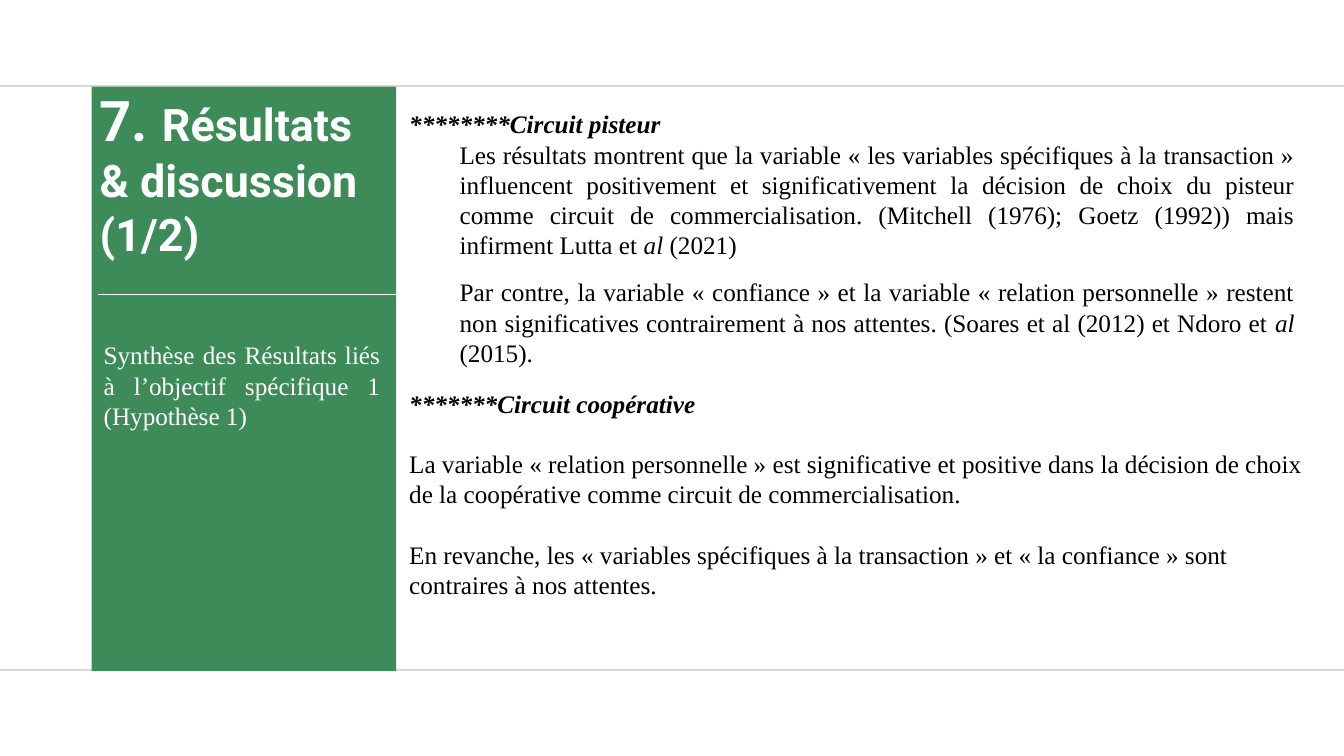
from lxml import etree
from pptx import Presentation
from pptx import util as u
from pptx.dml.color import RGBColor
from pptx.enum import shapes, text
from pptx.oxml import ns

PX = 9144
COLORS = {"green": "3E8B5A", "white": "FFFFFF", "black": "000000", "rule": "D9D9D9"}
SERIF = "Times New Roman"
SANS = "Roboto"


def color(name):
    return RGBColor.from_string(COLORS[name])


def add_text(paragraph, content, font=SERIF, size=18, ink="black", bold=False, italic=False):
    run = paragraph.add_run()
    run.text = content
    run.font.name = font
    run.font.size = u.Pt(size)
    run.font.color.rgb = color(ink)
    run.font.bold = bold
    run.font.italic = italic


class SlideBuilder:
    def __init__(self, presentation):
        self.slide = presentation.slides.add_slide(presentation.slide_layouts[6])

    def line(self, left, right, y, ink, width):
        connector = self.slide.shapes.add_connector(
            shapes.MSO_CONNECTOR.STRAIGHT, left * PX, y * PX, right * PX, y * PX)
        connector.line.color.rgb = color(ink)
        connector.line.width = u.Pt(width)
        etree.SubElement(connector._element.spPr, ns.qn("a:effectLst"))

    def panel(self, left, top, width, height, fill):
        shape = self.slide.shapes.add_shape(
            shapes.MSO_SHAPE.RECTANGLE, left * PX, top * PX, width * PX, height * PX)
        shape.shadow.inherit = False
        shape.fill.solid()
        shape.fill.fore_color.rgb = color(fill)
        shape.line.fill.background()

    def textbox(self, left, top, width, height, paragraphs, justify=False, gap=0):
        box = self.slide.shapes.add_textbox(left * PX, top * PX, width * PX, height * PX)
        frame = box.text_frame
        frame.word_wrap = True
        for index, runs in enumerate(paragraphs):
            paragraph = frame.add_paragraph() if index else frame.paragraphs[0]
            paragraph.alignment = text.PP_ALIGN.JUSTIFY if justify else text.PP_ALIGN.LEFT
            paragraph.space_before = u.Pt(gap if index else 0)
            for content, style in runs:
                add_text(paragraph, content, **style)


def main():
    presentation = Presentation()
    presentation.slide_width = 1333 * PX
    presentation.slide_height = 750 * PX
    builder = SlideBuilder(presentation)

    title = {"font": SANS, "ink": "white", "bold": True}
    heading = {"bold": True, "italic": True}
    italic = {"italic": True}

    for y in (85, 665):
        builder.line(0, 1333, y, "rule", 1.5)
    builder.panel(91, 86, 302, 580, "green")
    builder.line(97, 393, 292, "white", 0.5)
    builder.textbox(89, 80, 302, 185, [
        [("7. ", {**title, "size": 40}), ("Résultats & discussion (1/2)", {**title, "size": 32})],
    ])
    builder.textbox(93, 332, 294, 101, [
        [("Synthèse des Résultats liés à l’objectif spécifique 1 (Hypothèse 1)", {"ink": "white"})],
    ], justify=True)
    builder.textbox(396, 103, 882, 40, [[("********Circuit pisteur", heading)]])
    builder.textbox(446, 133, 848, 238, [
        [("Les résultats montrent que la variable « les variables spécifiques à la transaction » "
          "influencent positivement et significativement la décision de choix du pisteur comme "
          "circuit de commercialisation. (Mitchell (1976); Goetz (1992)) mais infirment Lutta et ", {}),
         ("al", italic), (" (2021)", {})],
        [("Par contre, la variable « confiance » et la variable « relation personnelle » restent "
          "non significatives contrairement à nos attentes. (Soares et al (2012) et Ndoro et ", {}),
         ("al", italic), (" (2015).", {})],
    ], justify=True, gap=12)
    builder.textbox(396, 380, 922, 222, [
        [("*******Circuit coopérative", heading)],
        [("La variable « relation personnelle » est significative et positive dans la décision "
          "de choix de la coopérative comme circuit de commercialisation.", {})],
        [("En revanche, les « variables spécifiques à la transaction » et « la confiance » sont "
          "contraires à nos attentes.", {})],
    ], gap=21.6)

    presentation.save("out.pptx")


if __name__ == "__main__":
    main()
